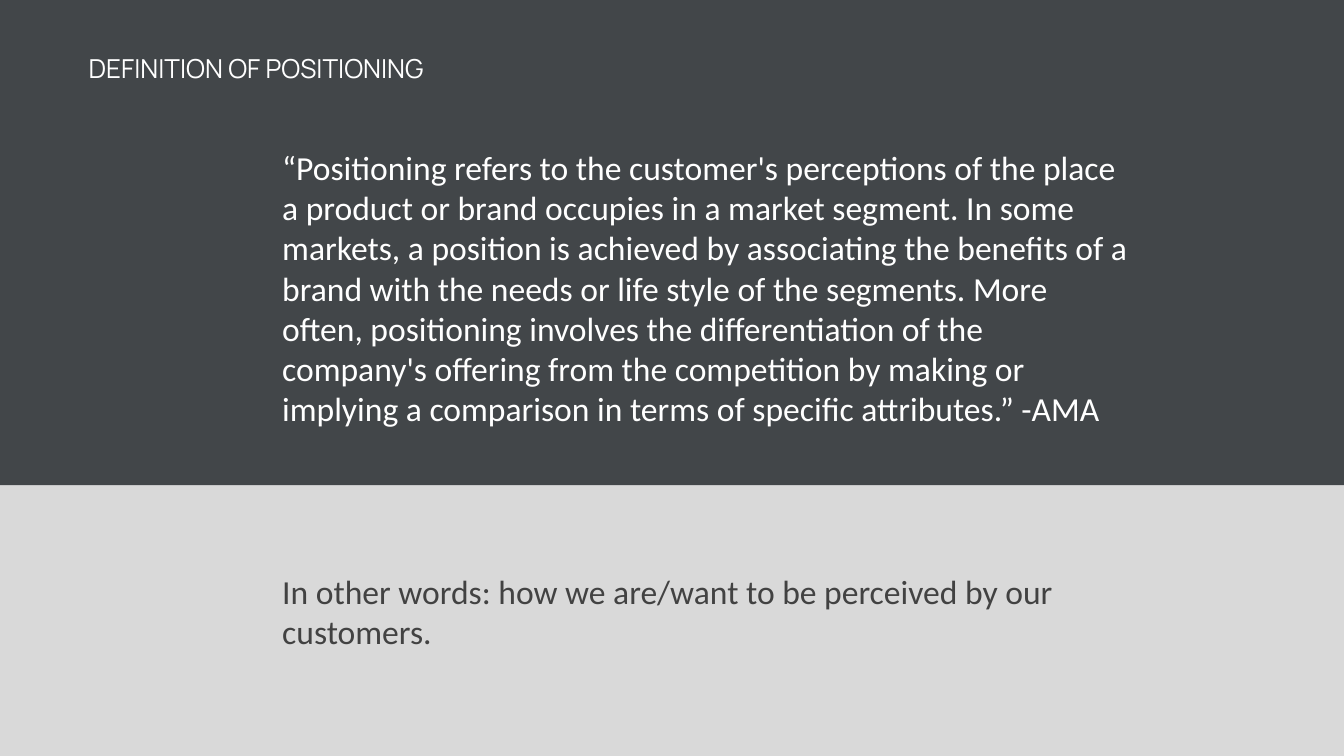
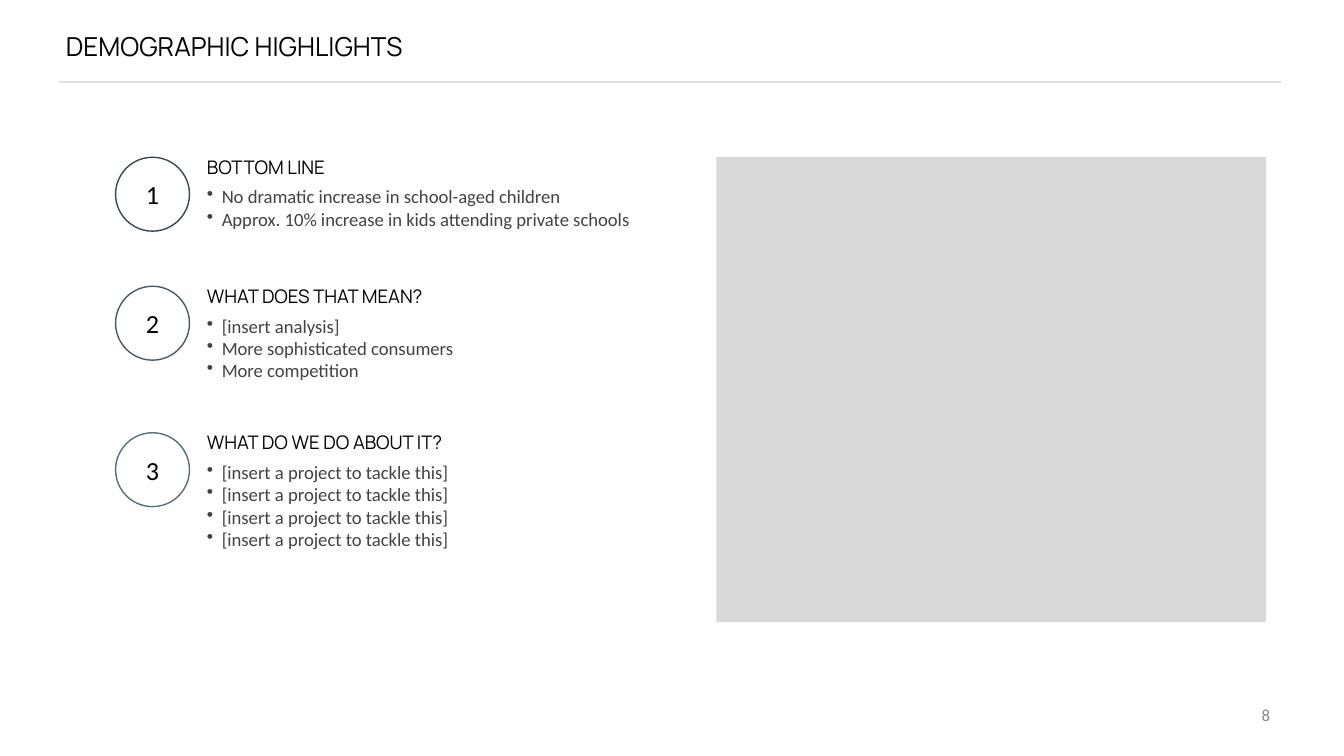
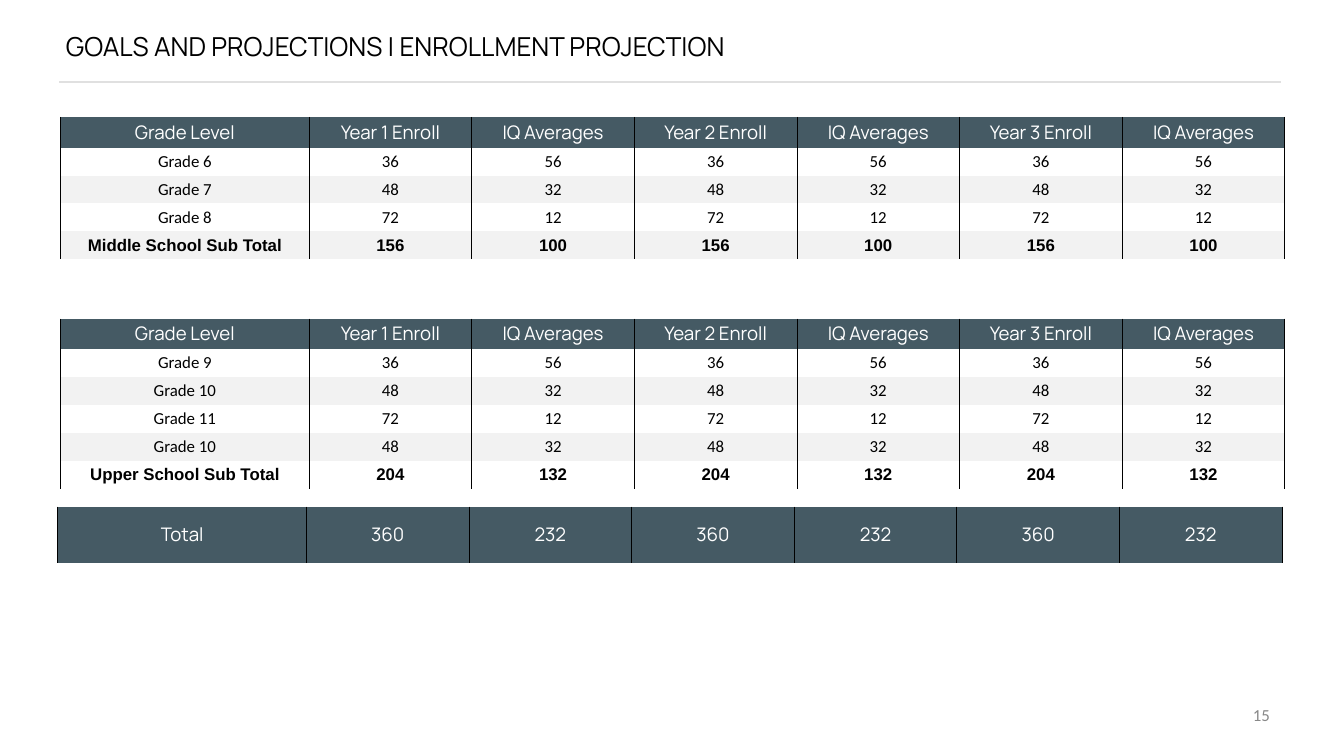
import dataclasses

import lxml.etree
import pptx
import pptx.dml.color
import pptx.enum.shapes
import pptx.enum.text
import pptx.oxml.ns
import pptx.util

ALIGN = pptx.enum.text.PP_ALIGN
ANCHOR = pptx.enum.text.MSO_ANCHOR
SHAPE = pptx.enum.shapes.MSO_SHAPE
qn = pptx.oxml.ns.qn


@dataclasses.dataclass(frozen=True)
class Theme:
    # Colours
    black: str = "000000"
    white: str = "FFFFFF"
    body: str = "424242"
    panel: str = "D9D9D9"
    night: str = "13191C"
    slate: str = "455A64"
    stripe: str = "F2F2F2"
    rule: str = "E0E0E0"
    muted: str = "888888"
    rings: tuple = ("37474F", "455A64", "546E7A")
    # Fonts and type sizes
    heading_font: str = "Manrope"
    body_font: str = "Calibri"
    total_font: str = "Arial"
    title_size: int = 14
    quote_size: int = 18
    label_size: int = 10
    small_size: int = 9


@dataclasses.dataclass(frozen=True)
class Style:
    font: str
    size: int
    color: str
    bold: bool = False


def rgb(color):
    return pptx.dml.color.RGBColor.from_string(color)


class Builder:
    """Builds pages on a grid of 100 columns by 56.25 rows."""

    COLUMNS, ROWS = 100, 56.25

    def __init__(self, theme):
        self.theme = theme
        self.deck = pptx.Presentation()
        self.deck.slide_width = pptx.util.Inches(10)
        self.deck.slide_height = pptx.util.Inches(5.625)
        self.page = None

    def x(self, columns):
        return round(self.deck.slide_width * columns / self.COLUMNS)

    def y(self, rows):
        return round(self.deck.slide_height * rows / self.ROWS)

    def area(self, left, top, width, height):
        return self.x(left), self.y(top), self.x(width), self.y(height)

    def new_page(self):
        self.page = self.deck.slides.add_slide(self.deck.slide_layouts[5])

    def add_span(self, para, text, style, align=ALIGN.LEFT):
        para.alignment = align
        span = para.add_run()
        span.text = text
        span.font.name = style.font
        span.font.size = pptx.util.Pt(style.size)
        span.font.bold = style.bold
        span.font.color.rgb = rgb(style.color)

    def frame(self, box, anchor, inset, wrap=True):
        frame = box.text_frame
        frame.word_wrap = wrap
        frame.auto_size = pptx.enum.text.MSO_AUTO_SIZE.NONE
        frame.vertical_anchor = anchor
        frame.margin_left = frame.margin_right = self.x(inset)
        frame.margin_top = frame.margin_bottom = self.y(inset)
        return frame

    def title(self, text, area, color):
        box = self.page.shapes.title
        box.left, box.top, box.width, box.height = self.area(*area)
        style = Style(self.theme.heading_font, self.theme.title_size, color)
        self.add_span(self.frame(box, ANCHOR.MIDDLE, 0).paragraphs[0], text, style)
        # Bring the title in front of what is already on the page
        box.element.getparent().append(box.element)

    def text(self, text, area, style, align=ALIGN.LEFT, anchor=ANCHOR.TOP, wrap=True):
        box = self.page.shapes.add_textbox(*self.area(*area))
        frame = self.frame(box, anchor, 0.5, wrap)
        self.add_span(frame.paragraphs[0], text, style, align)

    def bullets(self, items, area, style):
        box = self.page.shapes.add_textbox(*self.area(*area))
        frame = self.frame(box, ANCHOR.TOP, 0.5)
        indent = self.x(1.1)
        for index, item in enumerate(items):
            para = frame.add_paragraph() if index else frame.paragraphs[0]
            properties = para._p.get_or_add_pPr()
            properties.set("marL", str(indent))
            properties.set("indent", str(-indent))
            lxml.etree.SubElement(properties, qn("a:buChar"), char="•")
            self.add_span(para, item, style)

    def band(self, area, color, opacity=100):
        box = self.page.shapes.add_shape(SHAPE.RECTANGLE, *self.area(*area))
        box.shadow.inherit = False
        box.line.fill.background()
        box.fill.solid()
        box.fill.fore_color.rgb = rgb(color)
        if opacity < 100:
            tint = box.element.spPr.find(".//" + qn("a:srgbClr"))
            lxml.etree.SubElement(tint, qn("a:alpha"), val=str(opacity * 1000))

    def ring(self, text, area, color, style):
        box = self.page.shapes.add_shape(SHAPE.OVAL, *self.area(*area))
        box.shadow.inherit = False
        box.fill.background()
        box.line.color.rgb = rgb(color)
        box.line.width = pptx.util.Pt(0.75)
        frame = self.frame(box, ANCHOR.MIDDLE, 0)
        self.add_span(frame.paragraphs[0], text, style, ALIGN.CENTER)

    def rule(self, left, right, row):
        line = self.page.shapes.add_connector(
            pptx.enum.shapes.MSO_CONNECTOR.STRAIGHT,
            self.x(left), self.y(row), self.x(right), self.y(row))
        line.line.color.rgb = rgb(self.theme.rule)
        line.line.width = pptx.util.Pt(0.75)
        lxml.etree.SubElement(line.element.spPr, qn("a:effectLst"))

    def content_page(self, title, number):
        """Starts a white page with title, rule and page number."""
        self.new_page()
        self.rule(4.4, 95.3, 6.1)
        self.title(title, (4.9, 0, 66.7, 6.8), self.theme.black)
        style = Style(self.theme.body_font, self.theme.small_size, self.theme.muted)
        self.text(str(number), (71.7, 51.9, 23.3, 2.5), style, ALIGN.RIGHT, ANCHOR.MIDDLE)

    def table(self, left, top, widths, row_height, rows):
        """Takes rows as (values, style, fill), where fill may be None."""
        area = self.area(left, top, sum(widths), row_height * len(rows))
        table = self.page.shapes.add_table(len(rows), len(widths), *area).table
        table.first_row = table.horz_banding = False
        for column, width in zip(table.columns, widths):
            column.width = self.x(width)
        for row, (values, style, fill) in zip(table.rows, rows):
            row.height = self.y(row_height)
            for cell, value in zip(row.cells, values):
                self.cell(cell, value, style, fill)

    def cell(self, cell, value, style, fill):
        cell.vertical_anchor = ANCHOR.MIDDLE
        cell.margin_left = cell.margin_right = self.x(0.2)
        cell.margin_top = cell.margin_bottom = self.y(0.2)
        self.add_span(cell.text_frame.paragraphs[0], str(value), style, ALIGN.CENTER)
        if fill:
            cell.fill.solid()
            cell.fill.fore_color.rgb = rgb(fill)
        else:
            cell.fill.background()
        # Vertical borders only
        properties = cell._tc.get_or_add_tcPr()
        for index, side in enumerate("LRTB"):
            border = lxml.etree.Element(qn("a:ln" + side), w=str(pptx.util.Pt(0.5)))
            if side in "LR":
                paint = lxml.etree.SubElement(border, qn("a:solidFill"))
                lxml.etree.SubElement(paint, qn("a:srgbClr"), val=self.theme.black)
            else:
                lxml.etree.SubElement(border, qn("a:noFill"))
            properties.insert(index, border)


def definition_page(build):
    theme = build.theme
    build.new_page()
    build.band((0, 0, build.COLUMNS, build.ROWS), theme.panel)
    build.band((0, 0, build.COLUMNS, 36.1), theme.night, opacity=76)
    build.text("In other words: how we are/want to be perceived by our customers.",
               (20.5, 42, 63.1, 7.1), Style(theme.body_font, theme.quote_size, theme.body))
    build.text(
        "“Positioning refers to the customer's perceptions of the place a product or brand "
        "occupies in a market segment. In some markets, a position is achieved by associating "
        "the benefits of a brand with the needs or life style of the segments. More often, "
        "positioning involves the differentiation of the company's offering from the "
        "competition by making or implying a comparison in terms of specific attributes.” -AMA",
        (20.5, 10.2, 64, 22.4), Style(theme.body_font, theme.quote_size, theme.white),
        anchor=ANCHOR.MIDDLE)
    build.title("DEFINITION OF POSITIONING", (6.6, 3.1, 66.7, 3.9), theme.white)


def highlights_page(build):
    theme = build.theme
    build.content_page("DEMOGRAPHIC HIGHLIGHTS", 8)
    number_style = Style(theme.body_font, theme.title_size, theme.black)
    heading_style = Style(theme.heading_font, theme.label_size, theme.black)
    bullet_style = Style(theme.body_font, theme.label_size, theme.body)
    # Top row, heading, heading width, bullets
    sections = [
        (11.1, "BOTTOM LINE", 10.4,
         ["No dramatic increase in school-aged children",
          "Approx. 10% increase in kids attending private schools"]),
        (20.7, "WHAT DOES THAT MEAN?", 18.2,
         ["[insert analysis]", "More sophisticated consumers", "More competition"]),
        (31.6, "WHAT DO WE DO ABOUT IT?", 20,
         ["[insert a project to tackle this]"] * 4),
    ]
    for number, (top, heading, width, items) in enumerate(sections, 1):
        build.ring(str(number), (8.6, top + 0.6, 5.5, 5.5),
                   theme.rings[number - 1], number_style)
        build.bullets(items, (14.9, top + 2.2, 35.1, 1 + 1.8 * len(items)), bullet_style)
        build.text(heading, (14.9, top, width, 2.5), heading_style, wrap=False)
    build.band((53.3, 11.7, 40.9, 34.6), theme.panel)


def projection_page(build):
    theme = build.theme
    build.content_page("GOALS AND PROJECTIONS | ENROLLMENT PROJECTION", 15)
    years = 3
    widths = [18.5] + [12.1] * 2 * years
    header_style = Style(theme.heading_font, theme.label_size, theme.white)
    grade_style = Style(theme.body_font, theme.small_size, theme.black)
    total_style = Style(theme.total_font, theme.small_size, theme.black, bold=True)
    header = ["Grade Level"]
    for year in range(1, years + 1):
        header += [f"Year {year} Enroll", "IQ Averages"]

    # School tables: each year repeats the same enrollment and average
    schools = [
        (8.7, "Middle School Sub Total",
         [("Grade 6", 36, 56), ("Grade 7", 48, 32), ("Grade 8", 72, 12)]),
        (23.7, "Upper School Sub Total",
         [("Grade 9", 36, 56), ("Grade 10", 48, 32), ("Grade 11", 72, 12),
          ("Grade 10", 48, 32)]),
    ]
    totals = [0, 0]
    for top, label, grades in schools:
        subtotal = [sum(grade[part] for grade in grades) for part in (1, 2)]
        totals = [total + part for total, part in zip(totals, subtotal)]
        rows = [(header, header_style, theme.slate)]
        for index, (name, *values) in enumerate(grades + [(label, *subtotal)]):
            style = grade_style if index < len(grades) else total_style
            fill = theme.stripe if index % 2 else None
            rows.append(([name] + values * years, style, fill))
        build.table(4.5, top, widths, 2.08, rows)

    # Grand total
    build.table(4.3, 37.7, widths, 4.17,
                [(["Total"] + totals * years, header_style, theme.slate)])


def main():
    build = Builder(Theme())
    definition_page(build)
    highlights_page(build)
    projection_page(build)
    build.deck.save("out.pptx")


if __name__ == "__main__":
    main()
